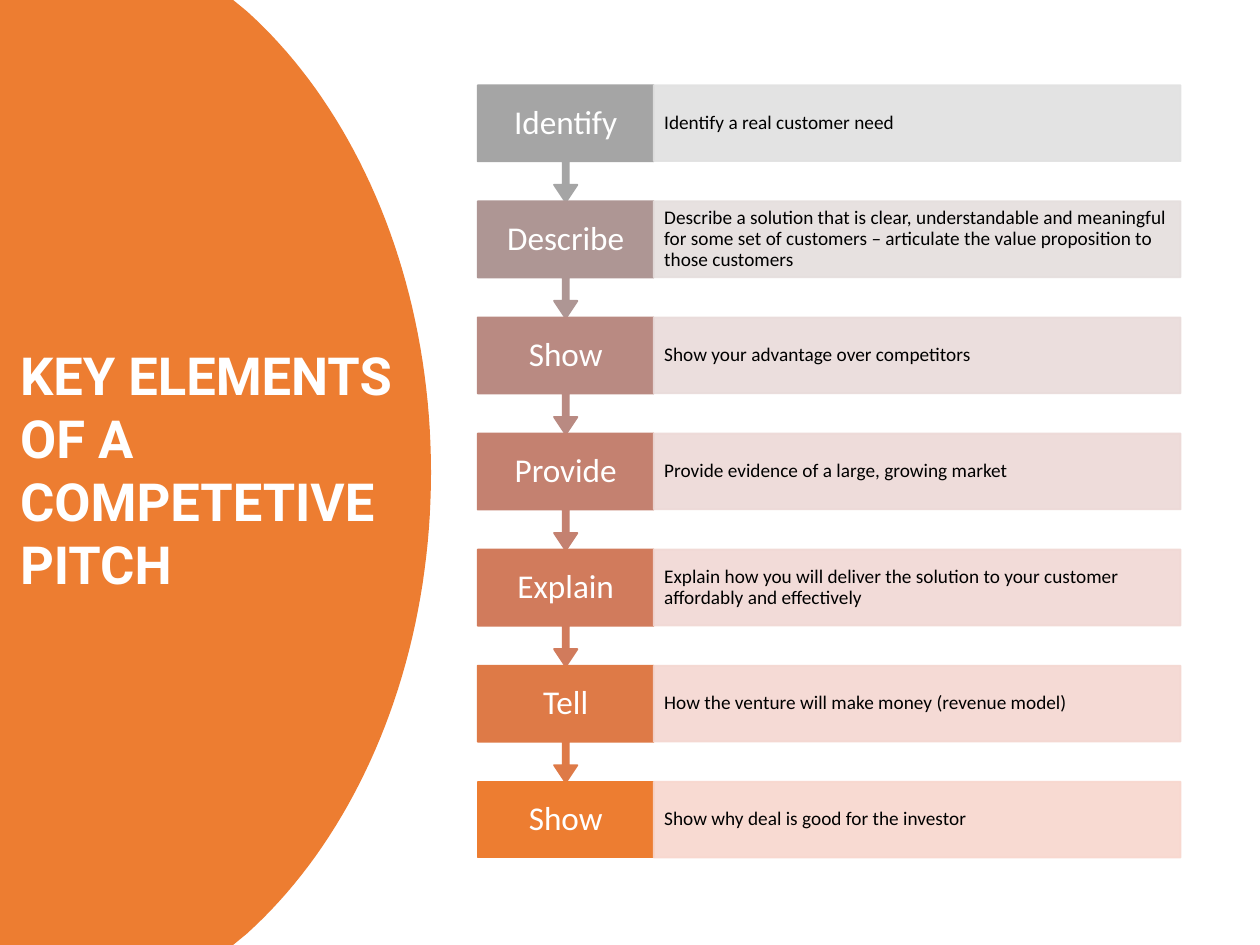
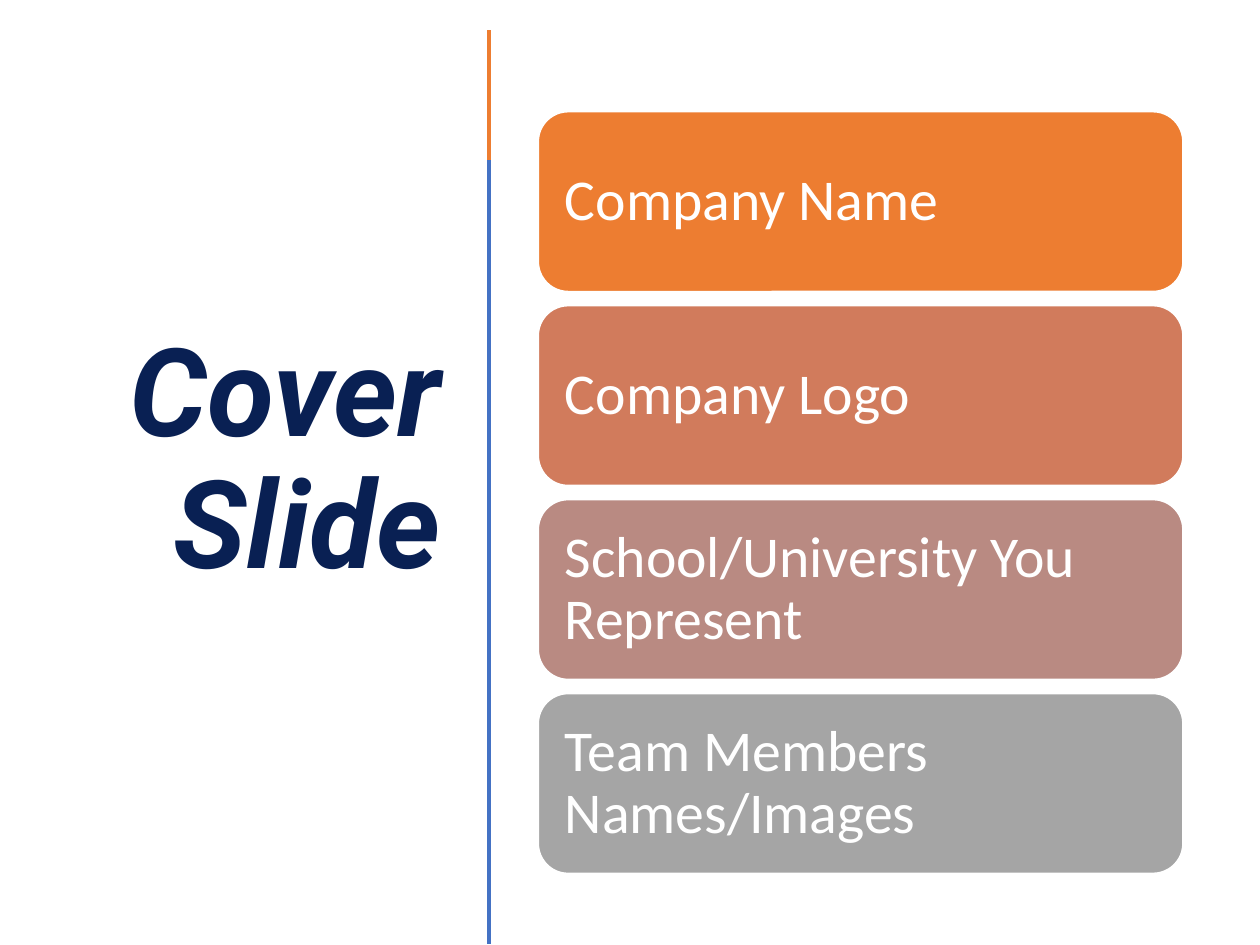
from lxml.etree import SubElement
from pptx import Presentation
from pptx.dml.color import RGBColor
from pptx.enum.shapes import MSO_CONNECTOR, MSO_SHAPE
from pptx.enum.text import MSO_ANCHOR, MSO_AUTO_SIZE, PP_ALIGN
from pptx.oxml.ns import qn
from pptx.util import Cm, Pt

ORANGE = RGBColor(0xED, 0x7D, 0x31)
BURNT_ORANGE = RGBColor(0xDE, 0x7A, 0x47)
TERRACOTTA = RGBColor(0xD1, 0x7B, 0x5C)
CLAY = RGBColor(0xC4, 0x81, 0x70)
DUSTY_ROSE = RGBColor(0xB9, 0x8A, 0x82)
TAUPE = RGBColor(0xAE, 0x96, 0x94)
GREY = RGBColor(0xA5, 0xA5, 0xA5)
BLUE = RGBColor(0x44, 0x72, 0xC4)
NAVY = RGBColor(0x09, 0x20, 0x53)
WHITE = RGBColor(0xFF, 0xFF, 0xFF)
BLACK = RGBColor(0x00, 0x00, 0x00)

TITLE_FONT = "Roboto"
BODY_FONT = "Calibri"

PITCH_STEPS = [
    ("Identify", "Identify a real customer need", GREY, RGBColor(0xE1, 0xE1, 0xE1)),
    ("Describe", "Describe a solution that is clear, understandable and meaningful "
     "for some set of customers – articulate the value proposition to those customers",
     TAUPE, RGBColor(0xE5, 0xDE, 0xDD)),
    ("Show", "Show your advantage over competitors",
     DUSTY_ROSE, RGBColor(0xE9, 0xDB, 0xDA)),
    ("Provide", "Provide evidence of a large, growing market",
     CLAY, RGBColor(0xED, 0xD9, 0xD7)),
    ("Explain", "Explain how you will deliver the solution to your customer "
     "affordably and effectively", TERRACOTTA, RGBColor(0xF1, 0xD8, 0xD4)),
    ("Tell", "How the venture will make money (revenue model)",
     BURNT_ORANGE, RGBColor(0xF4, 0xD7, 0xD1)),
    ("Show", "Show why deal is good for the investor",
     ORANGE, RGBColor(0xF8, 0xD7, 0xCE)),
]

COVER_ITEMS = [
    ("Company Name", ORANGE),
    ("Company Logo", TERRACOTTA),
    ("School/University You Represent", DUSTY_ROSE),
    ("Team Members Names/Images", GREY),
]


def format_text(shape, text, font_name, size, color, alignment, line_spacing=0.9):
    text_frame = shape.text_frame
    text_frame.text = text
    text_frame.word_wrap = True
    text_frame.auto_size = MSO_AUTO_SIZE.NONE
    text_frame.vertical_anchor = MSO_ANCHOR.MIDDLE
    paragraph = text_frame.paragraphs[0]
    paragraph.alignment = alignment
    paragraph.line_spacing = line_spacing
    font = paragraph.runs[0].font
    font.name = font_name
    font.size = Pt(size)
    font.color.rgb = color
    return font


def add_title_slide(presentation, text, box, size, color, alignment, line_spacing):
    slide = presentation.slides.add_slide(presentation.slide_layouts[5])
    title = slide.shapes.title
    title.left, title.top, title.width, title.height = map(Cm, box)
    font = format_text(title, text, TITLE_FONT, size, color, alignment, line_spacing)
    font.bold = True
    return slide, font


def paint(shape, fill, line):
    shape.shadow.inherit = False
    shape.fill.solid()
    shape.fill.fore_color.rgb = fill
    shape.line.color.rgb = line
    shape.line.width = Pt(1)


def make_translucent(shape, percent):
    for color in shape.element.spPr.iter(qn("a:srgbClr")):
        SubElement(color, qn("a:alpha"), val=str(percent * 1000))


def add_box(slide, kind, box, text, size, fill, line, color, alignment, margin):
    shape = slide.shapes.add_shape(kind, *map(Cm, box))
    paint(shape, fill, line)
    format_text(shape, text, BODY_FONT, size, color, alignment)
    text_frame = shape.text_frame
    text_frame.margin_left = text_frame.margin_right = Cm(margin)
    text_frame.margin_top = text_frame.margin_bottom = Cm(0)
    return shape


def add_vertical_line(slide, x, top, bottom, color, width):
    connector = slide.shapes.add_connector(
        MSO_CONNECTOR.STRAIGHT, Cm(x), Cm(top), Cm(x), Cm(bottom))
    connector.line.color.rgb = color
    connector.line.width = Pt(width)
    SubElement(connector.element.spPr, qn("a:effectLst"))


def curve_points(start, first_control, second_control, end, count=40):
    for index in range(count + 1):
        t = index / count
        weights = ((1 - t) ** 3, 3 * t * (1 - t) ** 2, 3 * t ** 2 * (1 - t), t ** 3)
        controls = (start, first_control, second_control, end)
        yield tuple(sum(weight * point[axis] for weight, point in zip(weights, controls))
                    for axis in (0, 1))


def add_curved_panel(slide, slide_height):
    upper = [(4.7, 0)]
    upper += curve_points((4.98, 0.23), (7.21, 2.24), (8.69, 5.66), (8.69, 9.53))
    lower = [(x, slide_height - y) for x, y in reversed(upper)]
    outline = upper + lower + [(0, slide_height)]
    builder = slide.shapes.build_freeform(0, 0)
    builder.add_line_segments([(Cm(x), Cm(y)) for x, y in outline], close=True)
    panel = builder.convert_to_shape()
    paint(panel, ORANGE, ORANGE)
    panel.line.fill.background()
    slide.shapes.title.element.addprevious(panel.element)


def add_pitch_step(slide, top, step, is_last):
    label, description, color, tint = step
    kind, height = MSO_SHAPE.DOWN_ARROW_CALLOUT, 2.36
    if is_last:
        kind, height = MSO_SHAPE.RECTANGLE, 1.53
    label_box = add_box(slide, kind, (9.63, top, 3.55, height), label, 19,
                        color, color, WHITE, PP_ALIGN.CENTER, 0.25)
    if not is_last:
        for index, value in enumerate((0.05, 0.1, 0.15, 0.65)):
            label_box.adjustments[index] = value
    description_box = add_box(slide, MSO_SHAPE.RECTANGLE, (13.18, top, 10.62, 1.53),
                              description, 11, tint, tint, BLACK, PP_ALIGN.LEFT, 0.21)
    make_translucent(description_box, 90)


def build_pitch_slide(presentation):
    slide, _ = add_title_slide(
        presentation, "KEY ELEMENTS OF A COMPETETIVE PITCH",
        (0.15, 3.25, 8.69, 12.4), 30, WHITE, PP_ALIGN.LEFT, 1.0)
    add_curved_panel(slide, 19.05)
    for index, step in enumerate(PITCH_STEPS):
        add_pitch_step(slide, 1.72 + 2.34 * index, step, index == len(PITCH_STEPS) - 1)


def build_cover_slide(presentation):
    slide, title_font = add_title_slide(
        presentation, "Cover Slide", (0.94, 1.57, 8.2, 15.52),
        70, NAVY, PP_ALIGN.RIGHT, 0.9)
    title_font.italic = True
    add_vertical_line(slide, 9.86, 3.15, 19.03, BLUE, 2)
    for index, (text, color) in enumerate(COVER_ITEMS):
        add_box(slide, MSO_SHAPE.ROUNDED_RECTANGLE, (10.85, 2.25 + 3.91 * index, 13, 3.63),
                text, 33, color, WHITE, WHITE, PP_ALIGN.LEFT, 0.36)
    add_vertical_line(slide, 9.86, 0.61, 3.23, ORANGE, 2.25)


def main():
    presentation = Presentation()
    presentation.slide_width = Cm(25.4)
    presentation.slide_height = Cm(19.05)
    build_pitch_slide(presentation)
    build_cover_slide(presentation)
    presentation.save("out.pptx")


if __name__ == "__main__":
    main()
